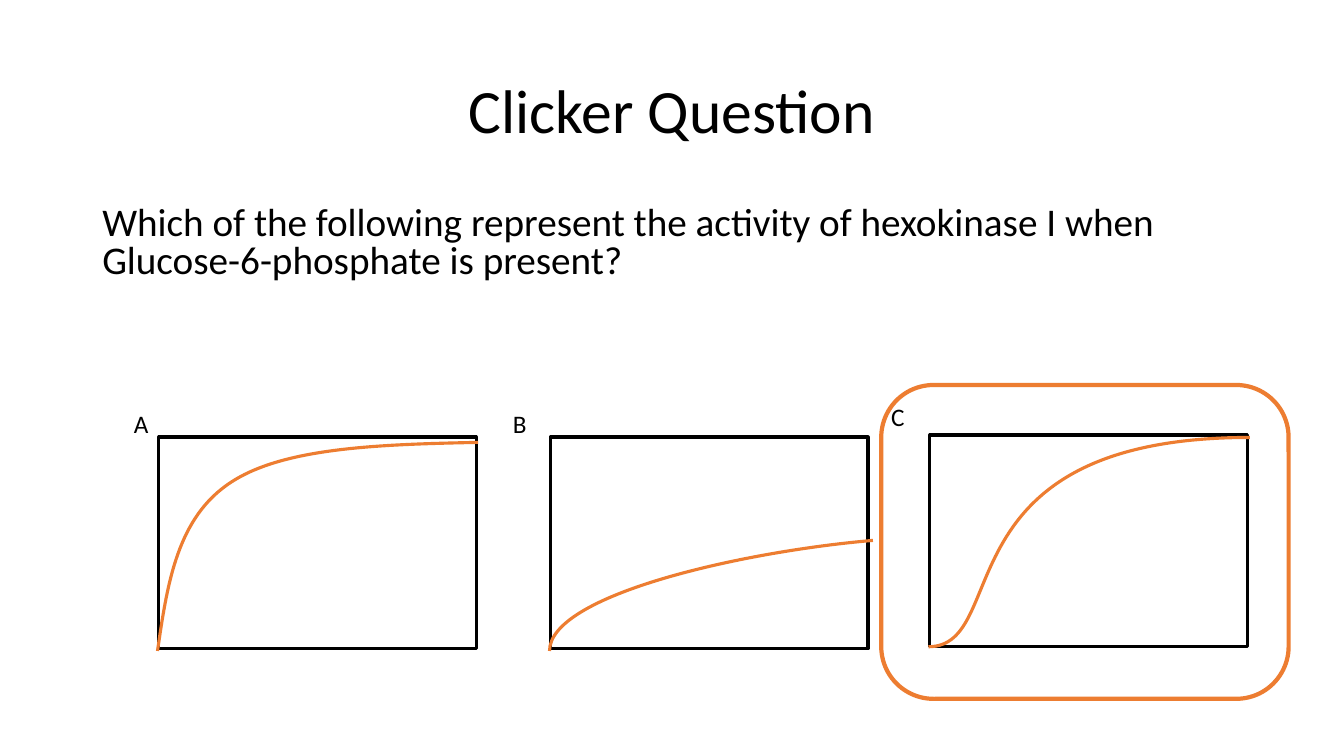
"""Build a clicker question slide with three candidate activity curves."""
import lxml.etree
import pptx
import pptx.dml.color
import pptx.enum.shapes
import pptx.enum.text
import pptx.oxml.ns
import pptx.util

Pt = pptx.util.Pt
qn = pptx.oxml.ns.qn
ANCHOR = pptx.enum.text.MSO_ANCHOR
ALIGN = pptx.enum.text.PP_ALIGN
SHAPE = pptx.enum.shapes.MSO_SHAPE
BLACK, ORANGE = "000000", "ED7D31"


def color(hex_string):
    return pptx.dml.color.RGBColor.from_string(hex_string)


def outline(shape, hex_string, width):
    shape.shadow.inherit = False
    shape.fill.background()
    shape.line.color.rgb = color(hex_string)
    shape.line.width = Pt(width)


deck = pptx.Presentation()
deck.slide_width, deck.slide_height = Pt(960), Pt(540)
page = deck.slides.add_slide(deck.slide_layouts[6])

label_frame = {"word_wrap": False, "auto_size": pptx.enum.text.MSO_AUTO_SIZE.SHAPE_TO_FIT_TEXT}
texts = [
    ("Clicker Question", (66, 28.75, 828, 104.4), 44,
     {"word_wrap": True, "vertical_anchor": ANCHOR.MIDDLE},
     {"alignment": ALIGN.CENTER, "line_spacing": 0.9}),
    ("Which of the following represent the activity of hexokinase I when Glucose-6-phosphate is present?",
     (66, 144, 828, 64.8), 28, {"word_wrap": True},
     {"line_spacing": 0.8, "space_before": Pt(10)}),
    ("A", (88.5, 288, 25, 29), 18, label_frame, {}),
    ("B", (359.3, 288, 24.5, 29), 18, label_frame, {}),
    ("C", (629.5, 283, 24.5, 29), 18, label_frame, {}),
]
for words, place, size, frame_format, para_format in texts:
    box = page.shapes.add_textbox(*map(Pt, place))
    for name, value in frame_format.items():
        setattr(box.text_frame, name, value)
    para = box.text_frame.paragraphs[0]
    for name, value in para_format.items():
        setattr(para, name, value)
    span = para.add_run()
    span.text = words
    for name, value in {"name": "Calibri", "size": Pt(size)}.items():
        setattr(span.font, name, value)
    span.font.color.rgb = color(BLACK)

panels = [
    (113.4, 312.2, (112.5, 465), [
        [(119.5, 417), (126.5, 369.5), (165, 344.5)],
        [(203, 319.5), (272, 317.5), (341.5, 316)],
    ]),
    (393.2, 312.2, (392.5, 465), [[(392.5, 425), (530, 394), (623.5, 386)]]),
    (664.2, 310.8, (663.25, 462), [[(723.5, 461.5), (669, 312.5), (892.75, 312.5)]]),
]
for left, top, start, bends in panels:
    panel = page.shapes.add_shape(SHAPE.RECTANGLE, Pt(left), Pt(top), Pt(226.8), Pt(151.2))
    outline(panel, BLACK, 2.25)

    builder = page.shapes.build_freeform(*map(Pt, start))
    builder.add_line_segments([tuple(map(Pt, bend[-1])) for bend in bends], close=False)
    curve = builder.convert_to_shape()
    outline(curve, ORANGE, 2.25)
    for segment, bend in zip(list(curve.element.iter(qn("a:lnTo"))), bends):
        cubic = lxml.etree.Element(qn("a:cubicBezTo"))
        for x, y in bend:
            lxml.etree.SubElement(cubic, qn("a:pt"), x=str(Pt(x) - curve.left), y=str(Pt(y) - curve.top))
        segment.getparent().replace(segment, cubic)

answer = page.shapes.add_shape(SHAPE.ROUNDED_RECTANGLE, Pt(629.5), Pt(275), Pt(291), Pt(224.2))
outline(answer, ORANGE, 3)

deck.save("out.pptx")
